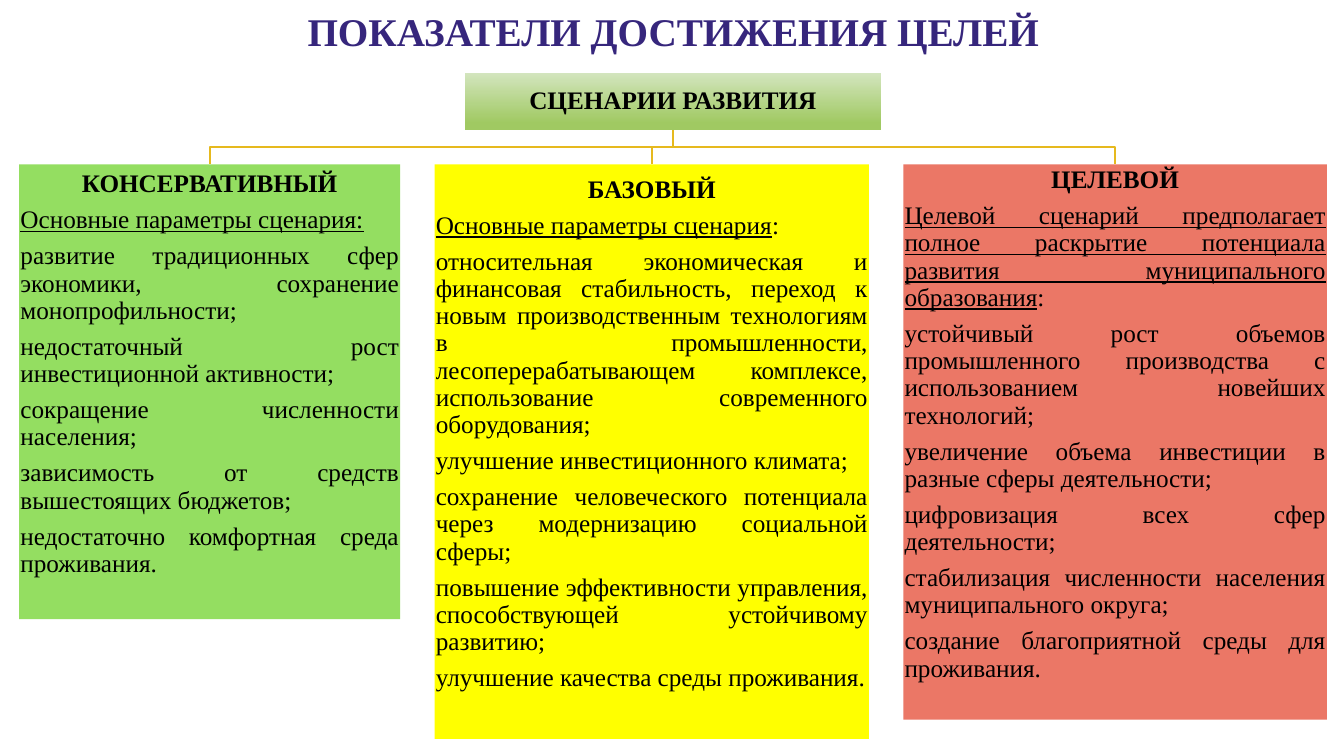
from pptx import Presentation
from pptx.dml.color import RGBColor as Rgb
from pptx.enum.shapes import MSO_SHAPE as Kind
from pptx.enum.text import MSO_ANCHOR as Anchor, PP_ALIGN as Align
from pptx.util import Pt

TITLE = "ПОКАЗАТЕЛИ ДОСТИЖЕНИЯ ЦЕЛЕЙ"
ROOT = "СЦЕНАРИИ РАЗВИТИЯ"
PLANS = [
    dict(name="КОНСЕРВАТИВНЫЙ", color="94DE61", width=272.2, height=324.9,
         lead="Основные параметры сценария:", tail="", items=[
             "развитие традиционных сфер экономики, сохранение монопрофильности;",
             "недостаточный рост инвестиционной активности;",
             "сокращение численности населения;",
             "зависимость от средств вышестоящих бюджетов;",
             "недостаточно комфортная среда проживания."]),
    dict(name="БАЗОВЫЙ", color="FFFF00", width=310.3, height=410.4,
         lead="Основные параметры сценария", tail=":", items=[
             "относительная экономическая и финансовая стабильность, переход к новым "
             "производственным технологиям в промышленности, лесоперерабатывающем "
             "комплексе, использование современного оборудования;",
             "улучшение инвестиционного климата;",
             "сохранение человеческого потенциала через модернизацию социальной сферы;",
             "повышение эффективности управления, способствующей устойчивому развитию;",
             "улучшение качества среды проживания."]),
    dict(name="ЦЕЛЕВОЙ", color="EB7766", width=302.6, height=396.7,
         lead="Целевой сценарий предполагает полное раскрытие потенциала развития "
              "муниципального образования", tail=":", items=[
             "устойчивый рост объемов промышленного производства с использованием "
             "новейших технологий;",
             "увеличение объема инвестиции в разные сферы деятельности;",
             "цифровизация всех сфер деятельности;",
             "стабилизация численности населения муниципального округа;",
             "создание благоприятной среды для проживания."]),
]
THEME = dict(font="Times New Roman", head=28, body=18, title="36267C", ink="000000",
             line="E6B91E", top="D3E5BE", base="A0C962")
LEFT, GAP, TOP = 13.7, 24.5, 117.4
ROOT_BOX = (332, 52, 297.4, 41)
INSET, FOOT = 0.9, 25.8

deck = Presentation()
deck.slide_width, deck.slide_height = Pt(960), Pt(540)
slide = deck.slides.add_slide(deck.slide_layouts[6])
shapes = slide.shapes


def style(para, size, color, bold, align):
    font = para.font
    font.name, font.size, font.bold = THEME["font"], Pt(size), bold
    font.color.rgb = Rgb.from_string(color)
    para.alignment = align


def add_para(frame, runs, bold=False, align=Align.JUSTIFY, first=False):
    para = frame.paragraphs[0] if first else frame.add_paragraph()
    for text, under in runs:
        run = para.add_run()
        run.text = text
        if under:
            run.font.underline = True
    para.line_spacing, para.space_after = 0.9, Pt(6.3)
    style(para, THEME["body"], THEME["ink"], bold, align)


def add_box(place, name, foot=INSET):
    box = shapes.add_shape(Kind.RECTANGLE, *map(Pt, place))
    box.shadow.inherit = False
    box.line.fill.background()
    frame = box.text_frame
    frame.word_wrap, frame.vertical_anchor = True, Anchor.MIDDLE
    frame.margin_left = frame.margin_right = frame.margin_top = Pt(INSET)
    frame.margin_bottom = Pt(foot)
    add_para(frame, [(name, False)], True, Align.CENTER, True)
    return box


def add_link(start, end):
    mid = (start[1] + end[1]) / 2
    spots = [start, (start[0], mid), (end[0], mid), end]
    spots = [(Pt(x), Pt(y)) for x, y in spots]
    form = shapes.build_freeform(*spots[0])
    form.add_line_segments(spots[1:], close=False)
    link = form.convert_to_shape()
    link.shadow.inherit = False
    link.fill.background()
    link.line.color.rgb = Rgb.from_string(THEME["line"])
    link.line.width = Pt(1.5)


head = shapes.add_textbox(Pt(1.4), Pt(2.2), Pt(959), Pt(39.6)).text_frame
head.word_wrap, head.vertical_anchor = True, Anchor.MIDDLE
head.text = TITLE
style(head.paragraphs[0], THEME["head"], THEME["title"], True, Align.CENTER)

lefts = [LEFT + sum(p["width"] + GAP for p in PLANS[:i]) for i in range(len(PLANS))]
x, y, width, height = ROOT_BOX
for plan, left in zip(PLANS, lefts):
    add_link((x + width / 2, y + height), (left + plan["width"] / 2, TOP))

fill = add_box(ROOT_BOX, ROOT).fill
fill.gradient()
fill.gradient_angle = 270
for stop, spot, color in zip(fill.gradient_stops, (0, 0.88), ("top", "base")):
    stop.position = spot
    stop.color.rgb = Rgb.from_string(THEME[color])

for plan, left in zip(PLANS, lefts):
    box = add_box((left, TOP, plan["width"], plan["height"]), plan["name"], FOOT)
    box.fill.solid()
    box.fill.fore_color.rgb = Rgb.from_string(plan["color"])
    lead = [(plan["lead"], True)] + ([(plan["tail"], False)] if plan["tail"] else [])
    add_para(box.text_frame, lead)
    for item in plan["items"]:
        add_para(box.text_frame, [(item, False)])

deck.save("out.pptx")
